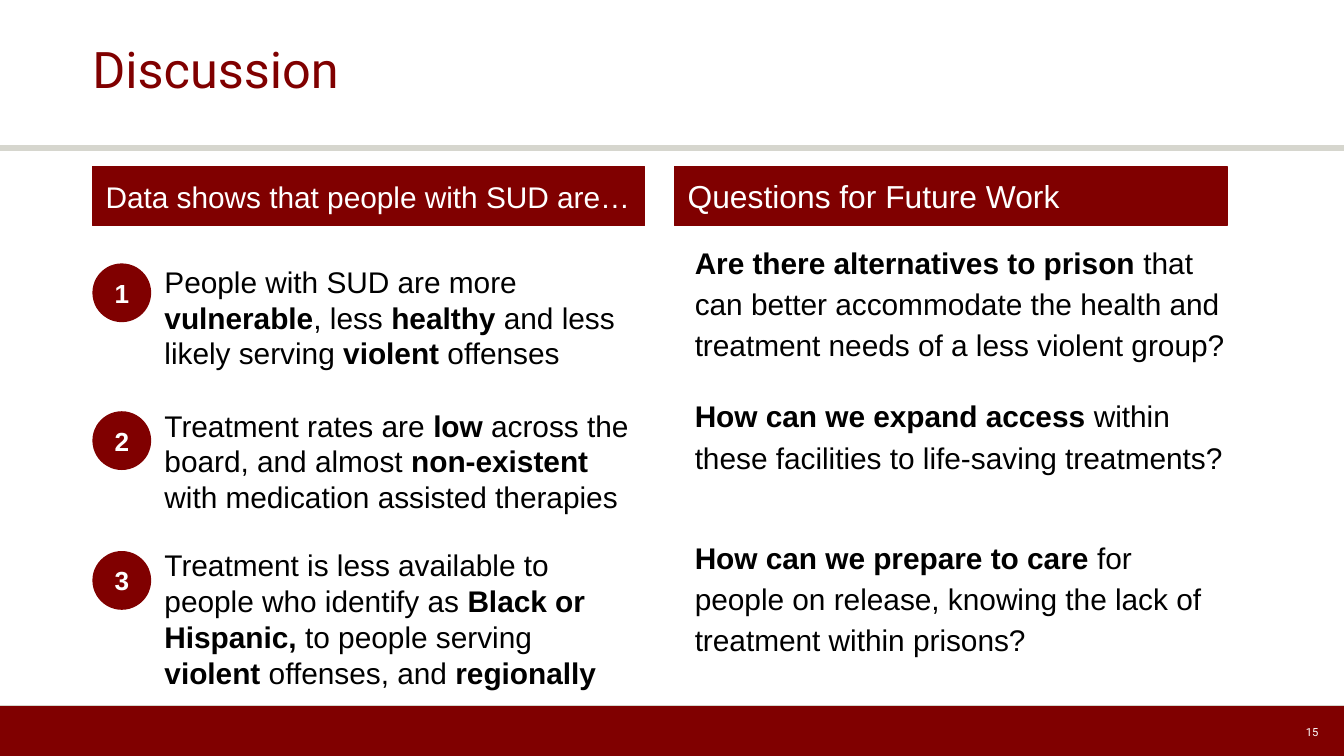
from pptx import Presentation
from pptx.dml.color import RGBColor
from pptx.enum.shapes import MSO_CONNECTOR, MSO_SHAPE
from pptx.enum.text import MSO_ANCHOR, PP_ALIGN
from pptx.oxml.ns import qn
from pptx.util import Pt
from lxml import etree

COLORS = {"maroon": "800000", "rule": "D6D6CE", "white": "FFFFFF", "black": "000000"}

TITLE = "Discussion"
PAGE_NUMBER = "15"
HEADINGS = [("Data shows that people with SUD are…", 16), ("Questions for Future Work", 17)]
# Asterisks enclose bold wording.
FINDINGS = [
    ("People with SUD are more *vulnerable*, less *healthy* and less likely serving *violent* offenses",
     137.5, 64.8, 141.1),
    ("Treatment rates are *low* across the board, and almost *non-existent* with medication assisted therapies",
     214.6, 64.8, 220.3),
    ("Treatment is less available to people who identify as *Black or Hispanic, *to people serving "
     "*violent *offenses, and *regionally*", 289.4, 84.2, 295.2),
]
QUESTIONS = [
    ("*Are there alternatives to prison *that can better accommodate the health and "
     "treatment needs of a less violent group?", 125.3),
    ("*How can we expand access *within these facilities to life-saving treatments?", 207.4),
    ("*How can we prepare to care* for people on release, knowing the lack of treatment within prisons?", 283),
]

WIDTH, HEIGHT = 720, 405
LEFT = 49.5
COLUMN_WIDTH, COLUMN_STEP = 296, 311.8
BADGE = 31.5
FOOTER_TOP = 378


def color(name):
    return RGBColor.from_string(COLORS[name])


def write(shape, text, size, ink, font="Arial", insets=(7.2, 7.2, 7.2, 7.2),
          anchor=MSO_ANCHOR.MIDDLE, align=PP_ALIGN.LEFT, spacing=1.0):
    frame = shape.text_frame
    frame.word_wrap = True
    frame.vertical_anchor = anchor
    frame.margin_left, frame.margin_top, frame.margin_right, frame.margin_bottom = map(Pt, insets)
    paragraph = frame.paragraphs[0]
    paragraph.alignment = align
    paragraph.line_spacing = spacing
    for index, part in enumerate(text.split("*")):
        if part:
            run = paragraph.add_run()
            run.text = part
            run.font.name = font
            run.font.size = Pt(size)
            run.font.bold = index % 2 == 1
            run.font.color.rgb = color(ink)


def add_text(slide, box, text, size, ink, **style):
    write(slide.shapes.add_textbox(*map(Pt, box)), text, size, ink, **style)


def add_block(slide, kind, box, outlined=False):
    block = slide.shapes.add_shape(kind, *map(Pt, box))
    block.shadow.inherit = False
    block.fill.solid()
    block.fill.fore_color.rgb = color("maroon")
    if outlined:
        block.line.color.rgb = color("maroon")
        block.line.width = Pt(0.75)
    else:
        block.line.fill.background()
    return block


def add_rule(slide, top, weight):
    rule = slide.shapes.add_connector(MSO_CONNECTOR.STRAIGHT, Pt(0), Pt(top), Pt(WIDTH), Pt(top))
    rule.line.color.rgb = color("rule")
    rule.line.width = Pt(weight)
    etree.SubElement(rule._element.spPr, qn("a:effectLst"))


def main():
    deck = Presentation()
    deck.slide_width, deck.slide_height = Pt(WIDTH), Pt(HEIGHT)
    slide = deck.slides.add_slide(deck.slide_layouts[6])

    add_rule(slide, 79.2, 3)
    add_block(slide, MSO_SHAPE.RECTANGLE, (0, FOOTER_TOP, WIDTH, HEIGHT - FOOTER_TOP))
    add_rule(slide, FOOTER_TOP, 0.75)
    add_text(slide, (LEFT, 0, 621, 77.8), TITLE, 27, "maroon", font="Roboto",
             insets=(0, 3, 0, 3), spacing=0.9)
    add_text(slide, (508.3, 381.6, 203, 21.6), PAGE_NUMBER, 6, "white", font="Roboto",
             insets=(5, 3, 5, 3), align=PP_ALIGN.RIGHT)

    for column, (heading, size) in enumerate(HEADINGS):
        box = (LEFT + column * COLUMN_STEP, 89.3, COLUMN_WIDTH, 31.7)
        write(add_block(slide, MSO_SHAPE.RECTANGLE, box, outlined=True), heading, size, "white")

    for number, (finding, top, height, badge_top) in enumerate(FINDINGS, 1):
        add_text(slide, (LEFT + BADGE, top, COLUMN_WIDTH - BADGE, height), finding, 16, "black")
        badge = add_block(slide, MSO_SHAPE.OVAL, (LEFT, badge_top, BADGE, BADGE))
        write(badge, f"*{number}*", 14, "white", insets=(0, 0, 0, 0), align=PP_ALIGN.CENTER)

    for question, top in QUESTIONS:
        add_text(slide, (362.2, top, COLUMN_WIDTH, 77.8), question, 16, "black",
                 insets=(10, 3, 0, 3), anchor=MSO_ANCHOR.TOP, spacing=1.15)

    deck.save("out.pptx")


if __name__ == "__main__":
    main()
